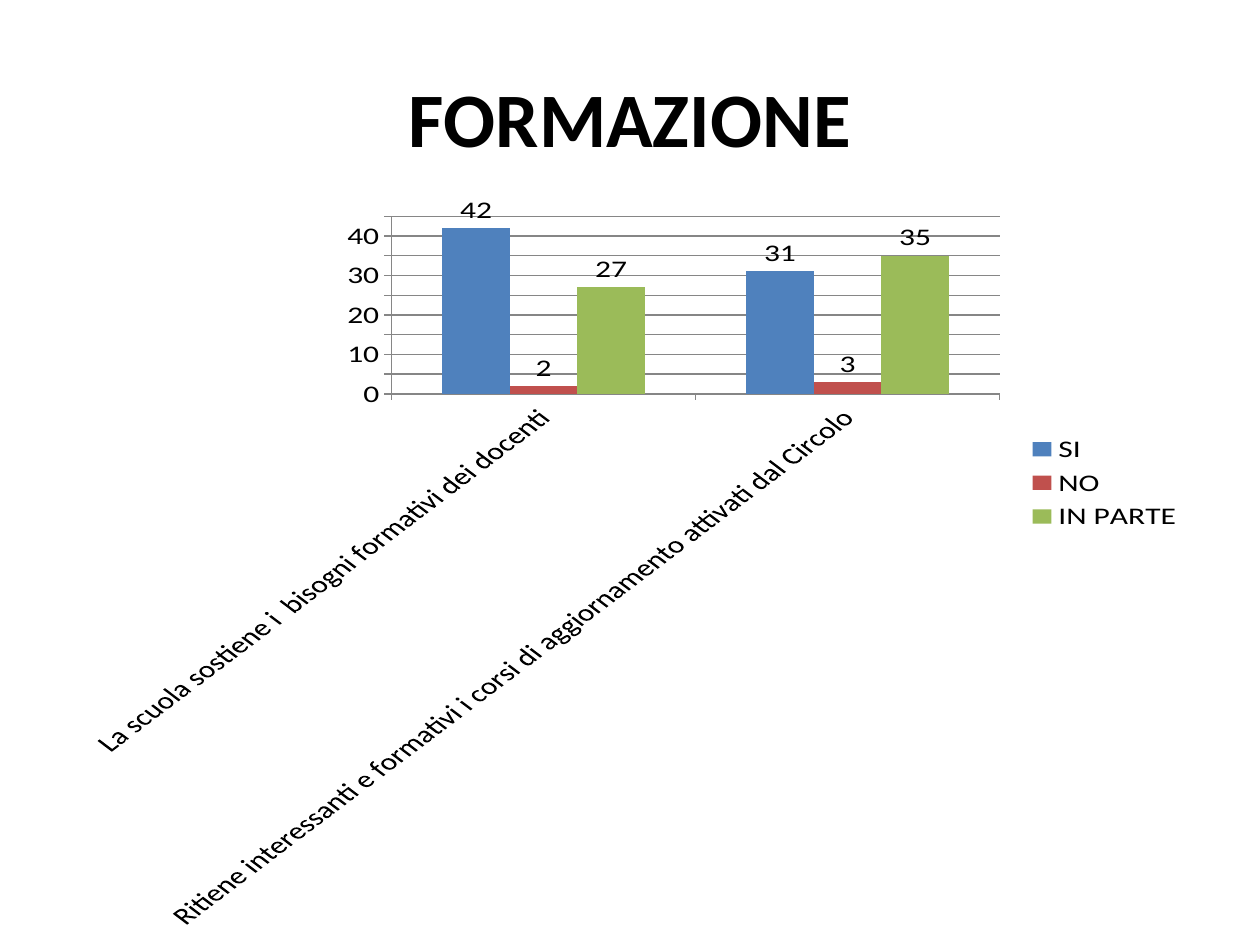
import pptx
import pptx.chart.data
import pptx.dml.color
import pptx.enum.chart
import pptx.enum.text
import pptx.util

RGBColor = pptx.dml.color.RGBColor
Cm = pptx.util.Cm
Pt = pptx.util.Pt

BLACK = RGBColor(0x00, 0x00, 0x00)
GREY = RGBColor(0x86, 0x86, 0x86)
BLUE = RGBColor(0x4F, 0x81, 0xBD)
RED = RGBColor(0xC0, 0x50, 0x4D)
GREEN = RGBColor(0x9B, 0xBB, 0x59)
FONT_NAME = "Calibri"

QUESTIONS = [
    "La scuola sostiene i  bisogni formativi dei docenti",
    "Ritiene interessanti e formativi i corsi di aggiornamento attivati dal Circolo",
]
ANSWERS = [
    ("SI", (42, 31), BLUE),
    ("NO", (2, 3), RED),
    ("IN PARTE", (27, 35), GREEN),
]


def format_font(font, size, bold=False):
    font.name = FONT_NAME
    font.size = Pt(size)
    font.bold = bold
    font.color.rgb = BLACK


def add_title(slide, text):
    title = slide.shapes.title
    title.left, title.top = Cm(1.27), Cm(0.76)
    title.width, title.height = Cm(22.86), Cm(3.18)
    title.text_frame.vertical_anchor = pptx.enum.text.MSO_ANCHOR.MIDDLE
    paragraph = title.text_frame.paragraphs[0]
    paragraph.alignment = pptx.enum.text.PP_ALIGN.CENTER
    run = paragraph.add_run()
    run.text = text
    format_font(run.font, 44, bold=True)


def format_axis(axis):
    axis.major_tick_mark = pptx.enum.chart.XL_TICK_MARK.OUTSIDE
    axis.minor_tick_mark = pptx.enum.chart.XL_TICK_MARK.NONE
    axis.format.line.color.rgb = GREY
    axis.format.line.width = Pt(0.75)
    format_font(axis.tick_labels.font, 18)


def format_series(series, color):
    series.format.fill.solid()
    series.format.fill.fore_color.rgb = color
    series.invert_if_negative = False
    labels = series.data_labels
    labels.show_value = True
    labels.position = pptx.enum.chart.XL_LABEL_POSITION.OUTSIDE_END
    format_font(labels.font, 18)


def add_answers_chart(slide):
    chart_data = pptx.chart.data.CategoryChartData()
    chart_data.categories = QUESTIONS
    for name, values, _ in ANSWERS:
        chart_data.add_series(name, values)
    chart = slide.shapes.add_chart(
        pptx.enum.chart.XL_CHART_TYPE.COLUMN_CLUSTERED,
        Cm(1.27), Cm(3.94), Cm(22.86), Cm(14.81), chart_data,
    ).chart
    format_font(chart.font, 18)
    chart.has_title = False
    chart.has_legend = True
    chart.legend.position = pptx.enum.chart.XL_LEGEND_POSITION.RIGHT
    chart.legend.include_in_layout = False
    format_font(chart.legend.font, 18)

    plot = chart.plots[0]
    plot.gap_width = 150
    plot.vary_by_categories = False
    for series, (_, _, color) in zip(plot.series, ANSWERS):
        format_series(series, color)

    for axis in (chart.category_axis, chart.value_axis):
        format_axis(axis)
    text_properties = chart.category_axis.tick_labels.font._element.getparent().getparent().getparent() \
        if hasattr(chart.category_axis.tick_labels.font, "_element") else None
    for body in chart.category_axis._element.xpath("c:txPr/a:bodyPr"):
        body.set("rot", "-2700000")
    value_axis = chart.value_axis
    value_axis.minimum_scale = 0
    value_axis.maximum_scale = 45
    value_axis.major_unit = 5
    value_axis.has_major_gridlines = True
    value_axis.major_gridlines.format.line.color.rgb = GREY
    value_axis.major_gridlines.format.line.width = Pt(0.75)


def main():
    presentation = pptx.Presentation()
    presentation.slide_width = Cm(25.4)
    presentation.slide_height = Cm(19.05)
    slide = presentation.slides.add_slide(presentation.slide_layouts[5])
    add_title(slide, "FORMAZIONE")
    add_answers_chart(slide)
    presentation.save("out.pptx")


if __name__ == "__main__":
    main()
